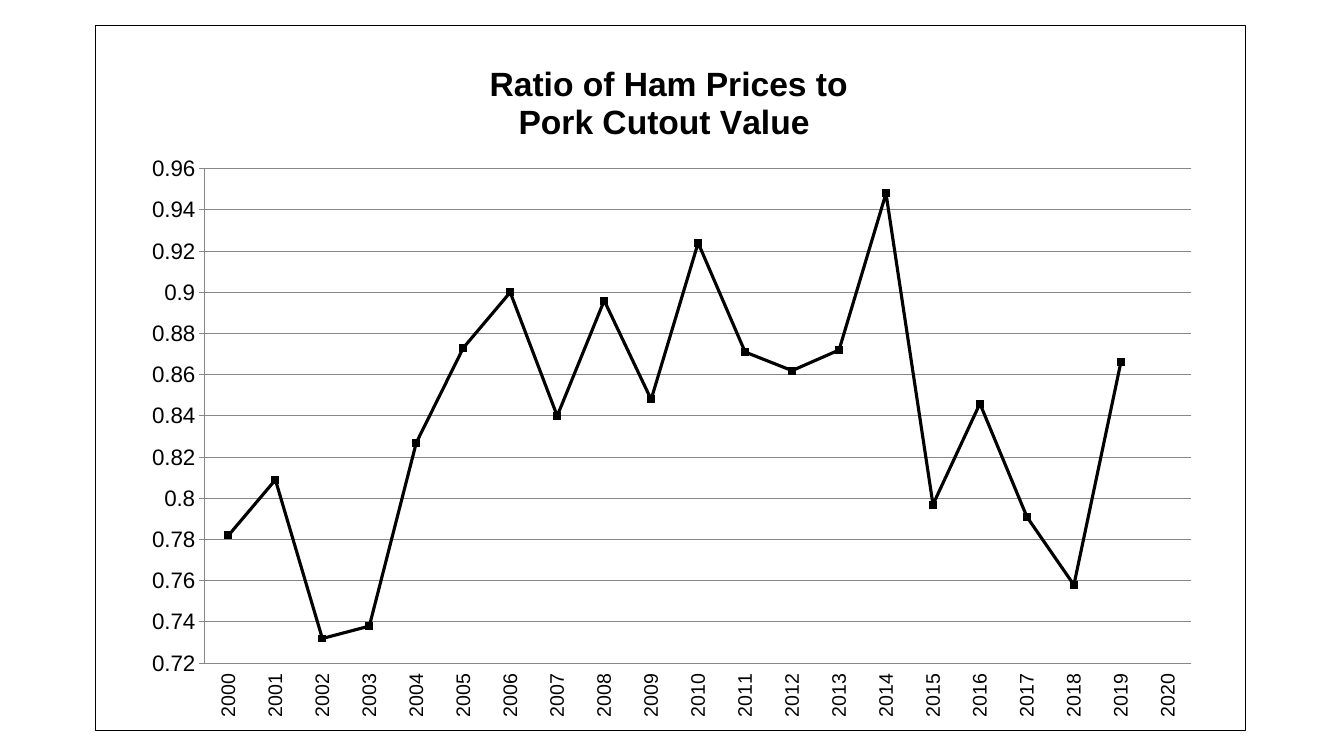
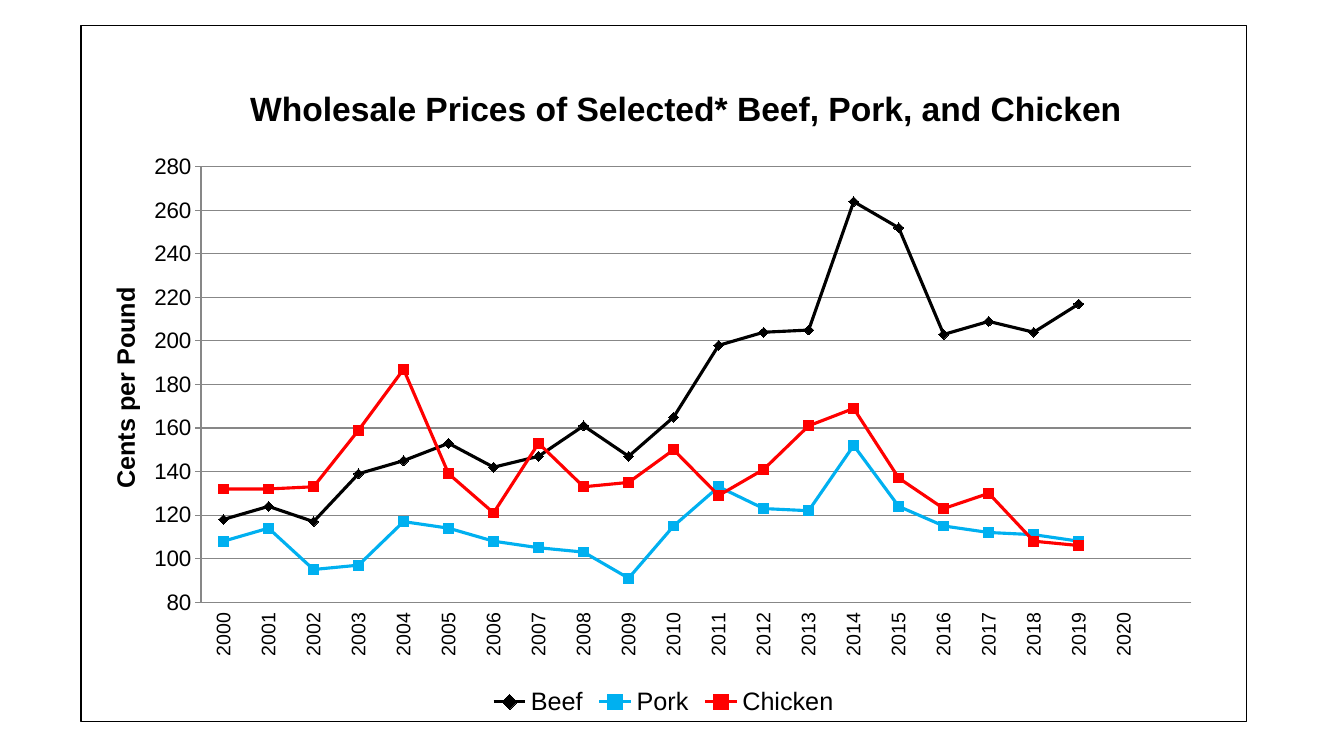
import dataclasses

import lxml.etree
import pptx
import pptx.chart.data
import pptx.dml.color
import pptx.enum.chart
import pptx.oxml.ns
import pptx.util

Pt = pptx.util.Pt
qn = pptx.oxml.ns.qn
Marker = pptx.enum.chart.XL_MARKER_STYLE


@dataclasses.dataclass(frozen=True)
class Theme:
    font: str = "Arial"
    black: str = "000000"
    grid: str = "878787"
    pork: str = "00B0F0"
    chicken: str = "FF0000"
    title_size: int = 24
    text_size: int = 18
    value_size: int = 16
    year_size: int = 14
    border_width: float = 0.75
    series_width: float = 2.25


THEME = Theme()
YEARS = [str(year) for year in range(2000, 2021)]

HAM_RATIO = [0.782, 0.809, 0.732, 0.738, 0.827, 0.873, 0.9, 0.84, 0.896, 0.848, 0.924,
             0.871, 0.862, 0.872, 0.948, 0.797, 0.846, 0.791, 0.758, 0.866]
BEEF = [118, 124, 117, 139, 145, 153, 142, 147, 161, 147, 165,
        198, 204, 205, 264, 252, 203, 209, 204, 217]
PORK = [108, 114, 95, 97, 117, 114, 108, 105, 103, 91, 115,
        133, 123, 122, 152, 124, 115, 112, 111, 108]
CHICKEN = [132, 132, 133, 159, 187, 139, 121, 153, 133, 135, 150,
           129, 141, 161, 169, 137, 123, 130, 108, 106]


@dataclasses.dataclass(frozen=True)
class Series:
    name: str
    values: list
    color: str
    marker: Marker
    marker_size: int = 7


def rgb(color):
    return pptx.dml.color.RGBColor.from_string(color)


def set_line(line, color, width):
    line.color.rgb = rgb(color)
    line.width = Pt(width)


def set_font(font, size, bold=False):
    font.name = THEME.font
    font.size = Pt(size)
    font.bold = bold
    font.color.rgb = rgb(THEME.black)


def set_layout(parent, position, index):
    """Place a chart part by fractions of the chart: x, y and perhaps w, h."""
    for old in parent.findall(qn("c:layout")):
        parent.remove(old)
    layout = lxml.etree.Element(qn("c:layout"))
    manual = lxml.etree.SubElement(layout, qn("c:manualLayout"))
    settings = [("xMode", "edge"), ("yMode", "edge"), *zip("xywh", position)]
    if len(position) == 4:
        settings.insert(0, ("layoutTarget", "inner"))
    for tag, value in settings:
        lxml.etree.SubElement(manual, qn("c:" + tag)).set("val", str(value))
    parent.insert(index, layout)


def set_title(title, text, size, position):
    title.text_frame.text = text
    for paragraph in title.text_frame.paragraphs:
        set_font(paragraph.font, size, bold=True)
    set_layout(title._element, position, 1)


def set_border(chart):
    space = chart._chartSpace
    properties = lxml.etree.Element(qn("c:spPr"))
    lxml.etree.SubElement(properties, qn("a:noFill"))
    line = lxml.etree.SubElement(properties, qn("a:ln"), w=str(Pt(THEME.border_width)))
    fill = lxml.etree.SubElement(line, qn("a:solidFill"))
    lxml.etree.SubElement(fill, qn("a:srgbClr"), val=THEME.black)
    space.find(qn("c:chart")).addnext(properties)


def style_axes(chart, minimum, maximum, step):
    # Years, turned upright along the bottom
    years = chart.category_axis
    years.major_tick_mark = pptx.enum.chart.XL_TICK_MARK.NONE
    years.tick_label_position = pptx.enum.chart.XL_TICK_LABEL_POSITION.LOW
    set_font(years.tick_labels.font, THEME.year_size)
    years._element.find(qn("c:txPr")).find(qn("a:bodyPr")).set("rot", "-5400000")

    # Values, with gridlines
    values = chart.value_axis
    values.minimum_scale, values.maximum_scale, values.major_unit = minimum, maximum, step
    values.major_tick_mark = pptx.enum.chart.XL_TICK_MARK.OUTSIDE
    values.has_major_gridlines = True
    set_font(values.tick_labels.font, THEME.value_size)
    for line in (years.format.line, values.format.line, values.major_gridlines.format.line):
        set_line(line, THEME.grid, THEME.border_width)


def style_series(plotted, series):
    plotted.smooth = False
    set_line(plotted.format.line, series.color, THEME.series_width)
    marker = plotted.marker
    marker.style = series.marker
    marker.size = series.marker_size
    marker.format.fill.solid()
    marker.format.fill.fore_color.rgb = rgb(series.color)
    set_line(marker.format.line, series.color, THEME.border_width)


def add_chart_slide(presentation, box, title, title_at, plot_at, scale, categories,
                    all_series, value_title=None, value_title_at=None):
    slide = presentation.slides.add_slide(presentation.slide_layouts[6])

    # Data: years without a value stay empty
    data = pptx.chart.data.CategoryChartData()
    data.categories = categories
    for series in all_series:
        gap = [None] * (len(categories) - len(series.values))
        data.add_series(series.name, series.values + gap)

    # Frame, title and plot
    chart = slide.shapes.add_chart(
        pptx.enum.chart.XL_CHART_TYPE.LINE_MARKERS, *map(Pt, box), data).chart
    set_font(chart.font, THEME.text_size)
    set_border(chart)
    chart.has_title = True
    set_title(chart.chart_title, title, THEME.title_size, title_at)
    set_layout(chart._chartSpace.chart.plotArea, plot_at, 0)
    style_axes(chart, *scale)
    chart.plots[0].vary_by_categories = False
    for plotted, series in zip(chart.plots[0].series, all_series):
        style_series(plotted, series)

    # Value axis title
    if value_title:
        chart.value_axis.has_title = True
        axis_title = chart.value_axis.axis_title
        set_title(axis_title, value_title, THEME.text_size, value_title_at)
        axis_title.text_frame._txBody.find(qn("a:bodyPr")).set("rot", "-5400000")

    # Legend, where there is more than one series
    chart.has_legend = len(all_series) > 1
    if chart.has_legend:
        chart.legend.position = pptx.enum.chart.XL_LEGEND_POSITION.BOTTOM
        chart.legend.include_in_layout = False
        set_font(chart.legend.font, THEME.text_size)


def main():
    presentation = pptx.Presentation()
    presentation.slide_width = Pt(960)
    presentation.slide_height = Pt(540)

    add_chart_slide(
        presentation, box=(68, 18, 822, 504),
        title="Ratio of Ham Prices to\nPork Cutout Value ", title_at=(0.34, 0.05),
        plot_at=(0.095, 0.203, 0.858, 0.702), scale=(0.72, 0.96, 0.02), categories=YEARS,
        all_series=[Series("Series 1", HAM_RATIO, THEME.black, Marker.SQUARE, 5)])

    # The price chart keeps one unlabelled place after the last year
    add_chart_slide(
        presentation, box=(57.5, 18, 833, 497.5),
        title="Wholesale Prices of Selected* Beef, Pork, and Chicken", title_at=(0.14, 0.08),
        plot_at=(0.103, 0.203, 0.85, 0.626), scale=(80, 280, 20), categories=YEARS + [""],
        all_series=[Series("Beef", BEEF, THEME.black, Marker.DIAMOND),
                    Series("Pork", PORK, THEME.pork, Marker.SQUARE),
                    Series("Chicken", CHICKEN, THEME.chicken, Marker.SQUARE)],
        value_title="Cents per Pound", value_title_at=(0.02, 0.37))

    presentation.save("out.pptx")


if __name__ == "__main__":
    main()
